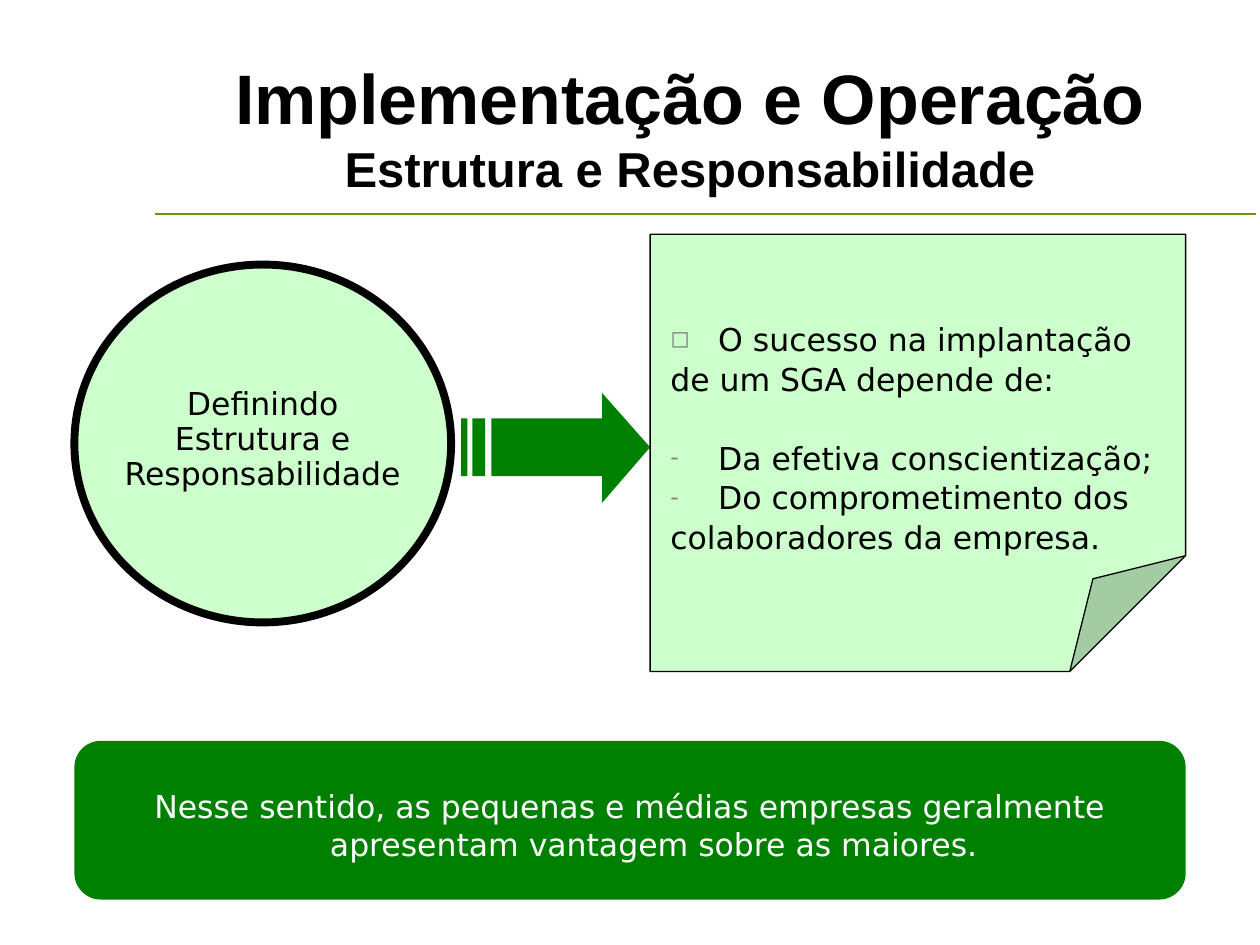
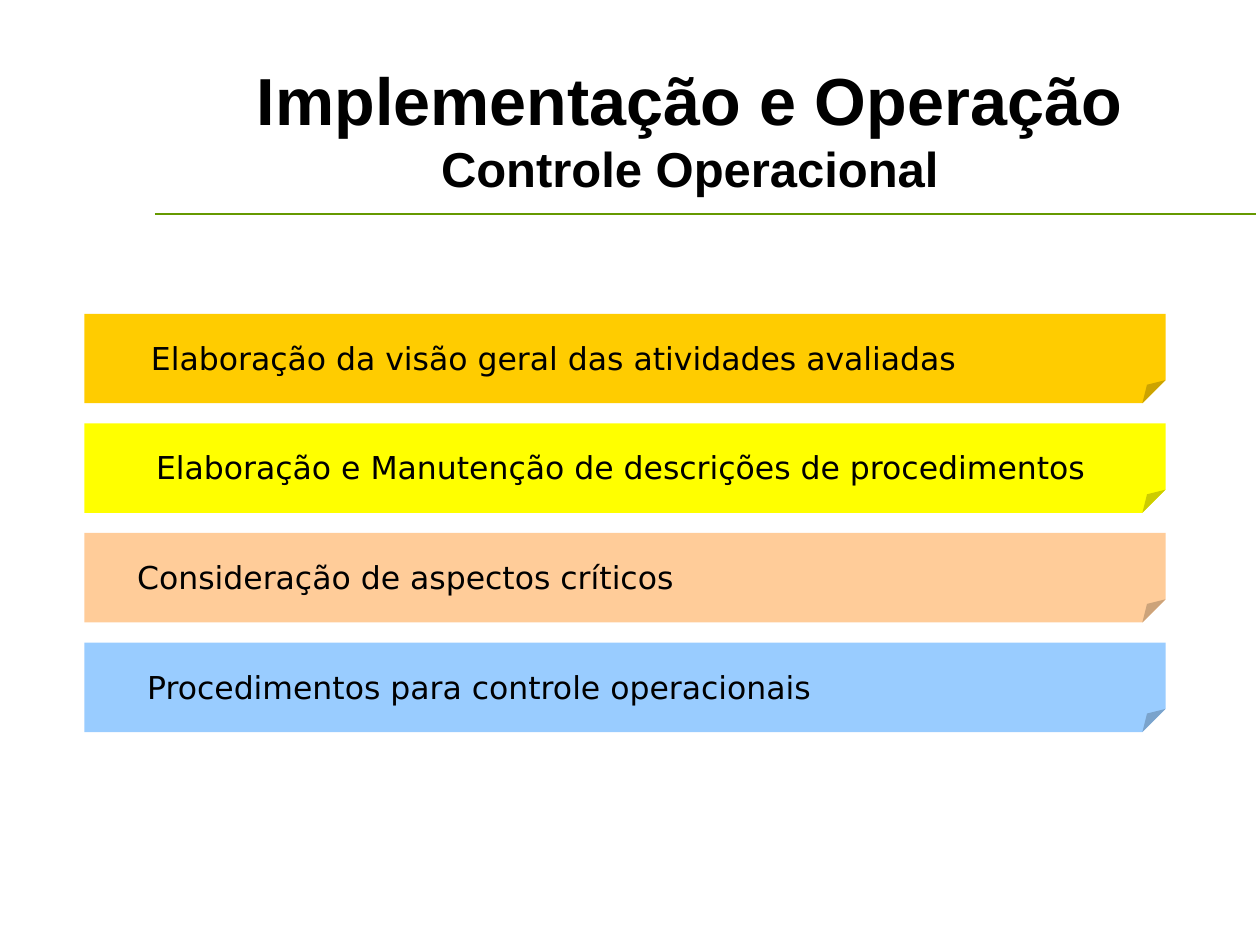
from lxml import etree
from pptx import Presentation, util as u
from pptx.dml.color import RGBColor
from pptx.enum import shapes, text
from pptx.oxml.ns import qn

HEADING, BODY = "Arial", "DejaVu Sans"
BLACK, WHITE, GREEN, PALE, RULE, GREY = "000000", "FFFFFF", "008000", "CCFFCC", "669900", "808080"
CENTER, LEFT = text.PP_ALIGN.CENTER, text.PP_ALIGN.LEFT
HANG = 0.38

TITLE = "Implementação e Operação"
CIRCLE_LINES = ["Definindo", "Estrutura e", "Responsabilidade"]
# bullet, text, space after in points
SUCCESS_LINES = [
    ("◻", "O sucesso na implantação", 1),
    (None, "de um SGA depende de:", 23.7),
    ("-", "Da efetiva conscientização;", 1),
    ("-", "Do comprometimento dos", 1),
    (None, "colaboradores da empresa.", 1),
]
CONCLUSION = ("Nesse sentido, as pequenas e médias empresas geralmente "
              "apresentam vantagem sobre as maiores.")
# fill, text, left edge of the text box
CONTROL_STEPS = [
    ("FFCC00", "Elaboração da visão geral das atividades avaliadas", 1.1),
    ("FFFF00", "Elaboração e Manutenção de descrições de procedimentos", 1.14),
    ("FFCC99", "Consideração de aspectos críticos", 0.99),
    ("99CCFF", "Procedimentos para controle operacionais", 1.07),
]
STEP_TOP, STEP_PITCH = 2.49, 0.87
ARROW_HEAD = [(4.78, 3.12), (4.78, 3.32), (3.9, 3.32), (3.9, 3.78),
              (4.78, 3.78), (4.78, 3.99), (5.16, 3.55)]
ARROW_STRIPES = [(3.75, 3.85), (3.66, 3.71)]


def rgb(color):
    return RGBColor.from_string(color)


def inches(*values):
    return [u.Inches(v) for v in values]


def style(font, size, color=BLACK, name=BODY, bold=False):
    values = {"size": u.Pt(size), "name": name, "bold": bold}
    for key, value in values.items():
        setattr(font, key, value)
    font.color.rgb = rgb(color)


def paint(sp, fill, line=None, width=0.75):
    sp.shadow.inherit = False
    sp.fill.solid()
    sp.fill.fore_color.rgb = rgb(fill)
    if line:
        sp.line.color.rgb = rgb(line)
        sp.line.width = u.Pt(width)
    else:
        sp.line.fill.background()


def add_box(s, kind, place, fill, line=None, width=0.75):
    sp = s.shapes.add_shape(kind, *inches(*place))
    paint(sp, fill, line, width)
    return sp


def add_note(s, place, fill, fold, line=None):
    """Add a sheet whose folded corner takes the given share of its short side."""
    sp = add_box(s, shapes.MSO_SHAPE.FOLDED_CORNER, place, fill, line)
    guides = sp._element.spPr.find(qn("a:prstGeom")).get_or_add_avLst()
    for guide in list(guides):
        guides.remove(guide)
    etree.SubElement(guides, qn("a:gd"), name="adj", fmla=f"val {round(fold * 100000)}")


def hang(p, bullet=None):
    """Give a paragraph a hanging indent and a small grey bullet or none."""
    pPr = p._p.get_or_add_pPr()
    pPr.set("marL", str(u.Inches(HANG)))
    pPr.set("indent", str(-u.Inches(HANG)))
    if not bullet:
        etree.SubElement(pPr, qn("a:buNone"))
        return
    clr = etree.SubElement(pPr, qn("a:buClr"))
    etree.SubElement(clr, qn("a:srgbClr"), val=GREY)
    etree.SubElement(pPr, qn("a:buSzPct"), val="75000")
    etree.SubElement(pPr, qn("a:buFont"), typeface=BODY)
    etree.SubElement(pPr, qn("a:buChar"), char=bullet)


def write(tf, lines, align=LEFT, color=BLACK):
    """Fill a text frame with one paragraph a line and return the paragraphs."""
    tf.word_wrap = True
    tf.auto_size = text.MSO_AUTO_SIZE.NONE
    for i, line in enumerate(lines):
        p = tf.paragraphs[0] if i == 0 else tf.add_paragraph()
        p.alignment = align
        r = p.add_run()
        r.text = line
        style(r.font, 18, color)
    return tf.paragraphs


def add_text(s, place, lines, align=LEFT, color=BLACK):
    return write(s.shapes.add_textbox(*inches(*place)).text_frame, lines, align, color)


def place_at(sp, left, top, width, height):
    sp.left, sp.top, sp.width, sp.height = inches(left, top, width, height)


def new_slide(prs, layout, subtitle, title_size):
    s = prs.slides.add_slide(prs.slide_layouts[layout])
    rule = s.shapes.add_connector(shapes.MSO_CONNECTOR.STRAIGHT, *inches(1.23, 1.7, 9.97, 1.7))
    rule.line.color.rgb = rgb(RULE)
    rule.line.width = u.Pt(1)
    etree.SubElement(rule._element.spPr, qn("a:effectLst"))

    title = s.shapes.title
    place_at(title, 1.3, 0.13, 8.35, 1.49)
    tf = title.text_frame
    tf.auto_size = text.MSO_AUTO_SIZE.NONE
    tf.vertical_anchor = text.MSO_ANCHOR.BOTTOM
    p = tf.paragraphs[0]
    p.alignment = CENTER
    for line, size in ((TITLE, title_size), (subtitle, 28)):
        if p.runs:
            p.add_line_break()
        r = p.add_run()
        r.text = line
        style(r.font, size, name=HEADING, bold=True)
    return s


def add_striped_arrow(s):
    stripes = [[(x1, 3.32), (x1, 3.78), (x2, 3.78), (x2, 3.32)] for x1, x2 in ARROW_STRIPES]
    fb = s.shapes.build_freeform(*inches(*ARROW_HEAD[0]), scale=1.0)
    for i, outline in enumerate([ARROW_HEAD] + stripes):
        points = [inches(*point) for point in outline]
        if i:
            fb.move_to(*points[0])
        fb.add_line_segments(points[1:], close=True)
    paint(fb.convert_to_shape(), GREEN)


def structure_slide(prs):
    s = new_slide(prs, 1, "Estrutura e Responsabilidade", 40)
    add_striped_arrow(s)
    kinds = shapes.MSO_SHAPE
    add_box(s, kinds.OVAL, (0.59, 2.1, 2.99, 2.84), PALE, BLACK, 4.5)
    for p in add_text(s, (0.35, 3.02, 3.47, 0.95), CIRCLE_LINES, CENTER):
        p.line_spacing = u.Pt(20)

    add_note(s, (5.16, 1.86, 4.25, 3.47), PALE, 0.265, BLACK)
    body = s.placeholders[1]
    s.shapes._spTree.append(body._element)  # bring the list in front of the note
    place_at(body, 5.22, 2.49, 4.15, 1.99)
    paragraphs = write(body.text_frame, [line for _, line, _ in SUCCESS_LINES])
    for p, (bullet, _, after) in zip(paragraphs, SUCCESS_LINES):
        hang(p, bullet)
        p.space_before = u.Pt(0)
        p.space_after = u.Pt(after)

    add_box(s, kinds.FLOWCHART_ALTERNATE_PROCESS, (0.59, 5.88, 8.82, 1.26), GREEN)
    hang(add_text(s, (0.67, 6.2, 8.66, 0.7), [CONCLUSION], CENTER, WHITE)[0])


def control_slide(prs):
    s = new_slide(prs, 5, "Controle Operacional", 38)
    for i, (fill, step, left) in enumerate(CONTROL_STEPS):
        top = STEP_TOP + i * STEP_PITCH
        add_note(s, (0.67, top, 8.58, 0.71), fill, 0.258)
        add_text(s, (left, top + 0.15, 7.8, 0.4), [step])


def main():
    prs = Presentation()
    prs.slide_width, prs.slide_height = inches(10, 7.5)
    structure_slide(prs)
    control_slide(prs)
    prs.save("out.pptx")


if __name__ == "__main__":
    main()
